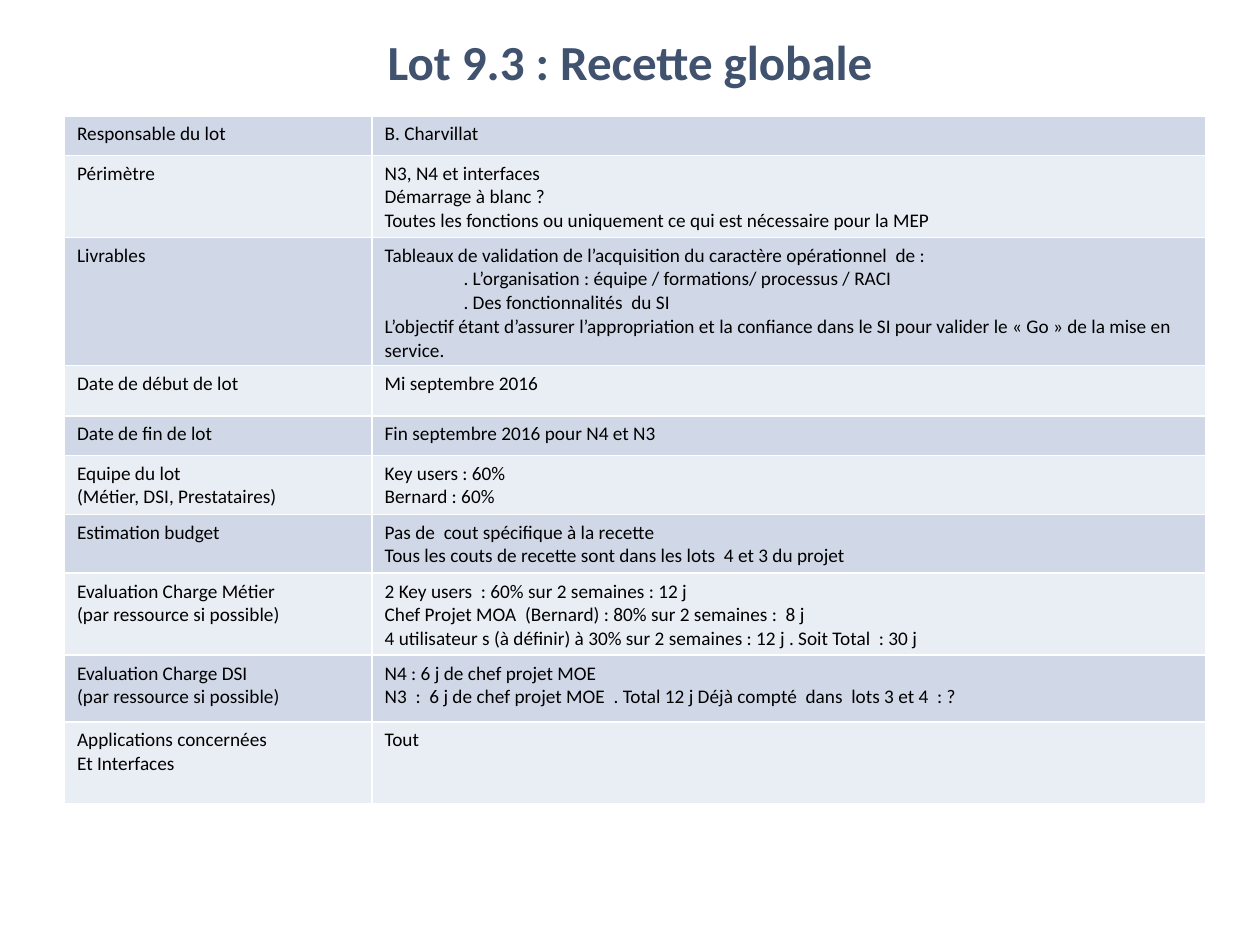
from pptx import Presentation
from pptx.dml.color import RGBColor
from pptx.enum.text import MSO_ANCHOR, PP_ALIGN
from pptx.util import Cm, Pt

TITLE = RGBColor(0x41, 0x52, 0x6F)
BLACK = RGBColor(0x00, 0x00, 0x00)
BANDS = [RGBColor(0xD0, 0xD8, 0xE8), RGBColor(0xE9, 0xED, 0xF4)]
FONT = "Calibri"
INDENT = Cm(1.59)

# Row height in cm, label lines, content lines
ROWS = [
    (0.79, ["Responsable du lot"], ["B. Charvillat"]),
    (0.79, ["Périmètre"], [
        "N3, N4 et interfaces",
        "Démarrage à blanc ?",
        "Toutes les fonctions ou uniquement ce qui est nécessaire pour la MEP"]),
    (1.65, ["Livrables"], [
        "Tableaux de validation de l’acquisition du caractère opérationnel  de :",
        ". L’organisation : équipe / formations/ processus / RACI",
        ". Des fonctionnalités  du SI",
        "L’objectif étant d’assurer l’appropriation et la confiance dans le SI "
        "pour valider le « Go » de la mise en service."]),
    (1.02, ["Date de début de lot"], ["Mi septembre 2016"]),
    (0.79, ["Date de fin de lot"], ["Fin septembre 2016 pour N4 et N3"]),
    (1.19, ["Equipe du lot", "(Métier, DSI, Prestataires)"],
     ["Key users : 60%", "Bernard : 60%"]),
    (1.14, ["Estimation budget"], [
        "Pas de  cout spécifique à la recette",
        "Tous les couts de recette sont dans les lots  4 et 3 du projet"]),
    (1.65, ["Evaluation Charge Métier", "(par ressource si possible)"], [
        "2 Key users  : 60% sur 2 semaines : 12 j",
        "Chef Projet MOA  (Bernard) : 80% sur 2 semaines :  8 j",
        "4 utilisateur s (à définir) à 30% sur 2 semaines : 12 j . Soit Total  : 30 j"]),
    (1.35, ["Evaluation Charge DSI", "(par ressource si possible)"], [
        "N4 : 6 j de chef projet MOE",
        "N3  :  6 j de chef projet MOE  . Total 12 j Déjà compté  dans  lots 3 et 4  : ?"]),
    (1.65, ["Applications concernées", "Et Interfaces"], ["Tout"]),
]


def style(p, size, color, bold=False):
    p.font.name = FONT
    p.font.size = Pt(size)
    p.font.bold = bold
    p.font.color.rgb = color


prs = Presentation()
prs.slide_width, prs.slide_height = Cm(25.4), Cm(19.05)
s = prs.slides.add_slide(prs.slide_layouts[6])

# Title
sp = s.shapes.add_textbox(Cm(1.27), Cm(0.33), Cm(22.86), Cm(1.8))
tf = sp.text_frame
tf.word_wrap = True
tf.vertical_anchor = MSO_ANCHOR.MIDDLE
p = tf.paragraphs[0]
p.text = "Lot 9.3 : Recette globale"
p.alignment = PP_ALIGN.CENTER
style(p, 28, TITLE, bold=True)

# Table of the work package
height = Cm(sum(row[0] for row in ROWS))
table = s.shapes.add_table(len(ROWS), 2, Cm(1.3), Cm(2.34), Cm(23), height).table
table.first_row = False
table.horz_banding = False
table.columns[0].width = Cm(6.2)
table.columns[1].width = Cm(16.8)

for i, (row_height, *texts) in enumerate(ROWS):
    table.rows[i].height = Cm(row_height)
    for cell, lines in zip(table.rows[i].cells, texts):
        cell.fill.solid()
        cell.fill.fore_color.rgb = BANDS[i % 2]
        cell.text = "\n".join(lines)
        for p in cell.text_frame.paragraphs:
            # Sub-items start with a full stop
            if p.text.startswith("."):
                p._p.get_or_add_pPr().set("marL", str(INDENT))
            style(p, 11, BLACK)

prs.save("out.pptx")
